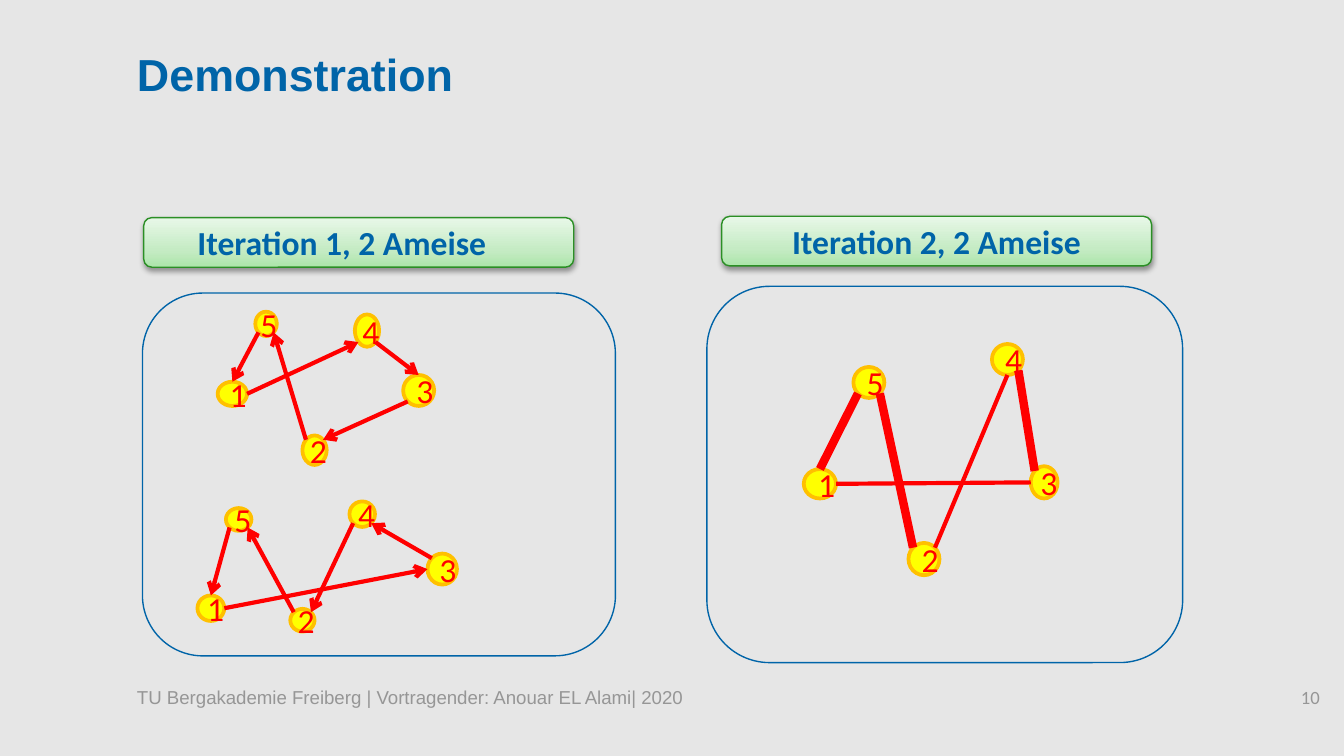
import copy

import pptx
import pptx.dml.color
import pptx.enum.shapes
import pptx.enum.text
import pptx.oxml
import pptx.oxml.ns
import pptx.util

Pt = pptx.util.Pt
Shape = pptx.enum.shapes.MSO_SHAPE
Align = pptx.enum.text.PP_ALIGN
Anchor = pptx.enum.text.MSO_ANCHOR

# Ant graphs: node number -> left, top, width, height
FIRST = {
    1: (116.6, 204.5, 15.8, 13), 2: (162, 233.3, 13, 15.8),
    3: (216, 200.9, 16.6, 16.6), 4: (190.1, 168.5, 13, 17.3),
    5: (136.8, 167, 11.5, 13),
}
SECOND = {
    1: (105.8, 319, 14.4, 13.7), 2: (155.5, 326.2, 13, 12.2),
    3: (229, 296.6, 15.8, 16.6), 4: (187.2, 268.6, 13.7, 13.7),
    5: (121, 272.2, 13.7, 12.2),
}
MERGED = {
    1: (430.6, 251.3, 17.3, 15.8), 2: (486.7, 290.9, 16.6, 17.3),
    3: (552.2, 249.8, 14.4, 17.3), 4: (531.4, 184.3, 16.6, 16.6),
    5: (457.2, 196.6, 16.6, 16.6),
}

# Edges: from node, its side, to node, its side, line width
THIN, THICK = 2.25, 4.5
FIRST_TOUR = [
    (1, "r", 4, "bl", THIN), (4, "br", 3, "t", THIN), (3, "bl", 2, "tr", THIN),
    (2, "tl", 5, "br", THIN), (5, "bl", 1, "t", THIN),
]
SECOND_TOUR = [
    (1, "r", 3, "l", THIN), (3, "tl", 4, "br", THIN), (4, "bl", 2, "tr", THIN),
    (2, "tl", 5, "br", THIN), (5, "bl", 1, "t", THIN),
]
TRAILS = [
    (1, "r", 3, "l", THIN), (3, "tl", 4, "br", THICK), (4, "b", 2, "tr", THIN),
    (2, "tl", 5, "br", THICK), (5, "bl", 1, "t", THICK),
]


def color(code):
    return pptx.dml.color.RGBColor.from_string(code)


def tag(name, **attrs):
    node = pptx.oxml.parse_xml(f"<a:{name} {pptx.oxml.ns.nsdecls('a')}/>")
    for key, value in attrs.items():
        node.set(key, str(value))
    return node


def rim(box, side):
    """Point on an ellipse, for a side such as 't' or 'bl'."""
    left, top, width, height = box
    reach = 0.5 if len(side) == 1 else 0.5 ** 1.5
    across = ("r" in side) - ("l" in side)
    down = ("b" in side) - ("t" in side)
    return left + width * (0.5 + reach * across), top + height * (0.5 + reach * down)


class Deck:
    BLUE, GREY, RED = "0064A8", "969696", "FF0000"
    YELLOW, GOLD, GREEN = "FFFF00", "FFC000", "2B8F25"
    FADE = [(0, "ACE5AA"), (0.35, "C5EBC4"), (1, "E8F8E8")]

    def __init__(self):
        self.file = pptx.Presentation()
        self.file.slide_width, self.file.slide_height = Pt(720), Pt(405)
        self.slide = self.file.slides.add_slide(self.file.slide_layouts[5])
        fill = self.slide.background.fill
        fill.solid()
        fill.fore_color.rgb = color("E6E6E6")

    def text(self, frame, words, size, font, ink, bold=False, align=Align.LEFT):
        para = frame.paragraphs[0]
        para.alignment = align
        run = para.add_run()
        run.text = words
        run.font.size, run.font.name, run.font.bold = Pt(size), font, bold
        run.font.color.rgb = color(ink)

    def bare(self, frame, anchor):
        frame.word_wrap = True
        frame.auto_size = pptx.enum.text.MSO_AUTO_SIZE.NONE
        frame.vertical_anchor = anchor
        frame.margin_left = frame.margin_right = 0
        frame.margin_top = frame.margin_bottom = 0

    def title(self, words, left, top, width, height):
        hold = self.slide.shapes.title
        hold.left, hold.top = Pt(left), Pt(top)
        hold.width, hold.height = Pt(width), Pt(height)
        self.bare(hold.text_frame, Anchor.MIDDLE)
        self.text(hold.text_frame, words, 24, "Arial", self.BLUE, True)

    def label(self, words, box, font, align=Align.LEFT):
        frame = self.slide.shapes.add_textbox(*map(Pt, box)).text_frame
        self.bare(frame, Anchor.TOP)
        self.text(frame, words, 10, font, self.GREY, align=align)

    def shape(self, kind, box, edge, width):
        item = self.slide.shapes.add_shape(kind, *map(Pt, box))
        item.shadow.inherit = False
        item.line.color.rgb = color(edge)
        item.line.width = Pt(width)
        return item

    def panel(self, *box):
        self.shape(Shape.ROUNDED_RECTANGLE, box, self.BLUE, 0.75).fill.background()

    def node(self, number, box):
        item = self.shape(Shape.FLOWCHART_CONNECTOR, box, self.GOLD, 2)
        item.fill.solid()
        item.fill.fore_color.rgb = color(self.YELLOW)
        self.text(item.text_frame, str(number), 18, "Calibri", self.RED,
                  align=Align.CENTER)

    def edge(self, start, end, width, arrow):
        line = self.slide.shapes.add_connector(
            pptx.enum.shapes.MSO_CONNECTOR.STRAIGHT, *map(Pt, start + end))
        line.line.color.rgb = color(self.RED)
        line.line.width = Pt(width)
        props = line.element.spPr
        if arrow:
            props.find(pptx.oxml.ns.qn("a:ln")).append(tag("tailEnd", type="arrow"))
        props.append(tag("effectLst"))

    def graph(self, nodes, edges, arrow=True):
        for number, box in nodes.items():
            self.node(number, box)
        for start, out, end, into, width in edges:
            self.edge(rim(nodes[start], out), rim(nodes[end], into), width, arrow)

    def header(self, words, left, top, align, indent=0):
        item = self.shape(Shape.ROUNDED_RECTANGLE, (left, top, 230.4, 26.6),
                          self.GREEN, 0.75)
        # Three-stop fade, dark at the bottom
        item.fill.gradient()
        item.fill.gradient_angle = 90
        props = item.element.spPr
        stops = props.find(".//" + pptx.oxml.ns.qn("a:gsLst"))
        stops.append(copy.deepcopy(stops[0]))
        for stop, (place, code) in zip(item.fill.gradient_stops, self.FADE):
            stop.position = place
            stop.color.rgb = color(code)
        # Soft shadow below
        shade = tag("outerShdw", blurRad=Pt(3.1), dist=Pt(1.6), dir=5400000,
                    rotWithShape=0)
        tint = tag("srgbClr", val="000000")
        tint.append(tag("alpha", val=38000))
        shade.append(tint)
        props.find(pptx.oxml.ns.qn("a:effectLst")).append(shade)
        frame = item.text_frame
        frame.margin_left = Pt(7.2 + indent)
        self.text(frame, words, 18, "Calibri", self.BLUE, True, align)


def main():
    deck = Deck()

    # Title and footer
    deck.title("Demonstration", 73.4, 14.4, 575.3, 49.7)
    deck.label("10", (649.4, 367.2, 57.6, 28.8), "Calibri", Align.RIGHT)
    deck.label("TU Bergakademie Freiberg | Vortragender: Anouar EL Alami| 2020",
               (73.4, 367.2, 575.3, 28), "Arial")

    # Second iteration: pheromone trails
    deck.panel(378.7, 153.4, 254.9, 201.6)
    deck.graph(MERGED, TRAILS, arrow=False)

    # First iteration: one tour for each ant
    deck.panel(76.3, 157, 253.4, 194.4)
    deck.graph(FIRST, FIRST_TOUR)
    deck.graph(SECOND, SECOND_TOUR)

    # Headers
    deck.header("Iteration 1, 2 Ameise", 77, 116.6, Align.LEFT, indent=20.3)
    deck.header("Iteration 2, 2 Ameise", 386.6, 115.9, Align.CENTER)

    deck.file.save("out.pptx")


if __name__ == "__main__":
    main()
